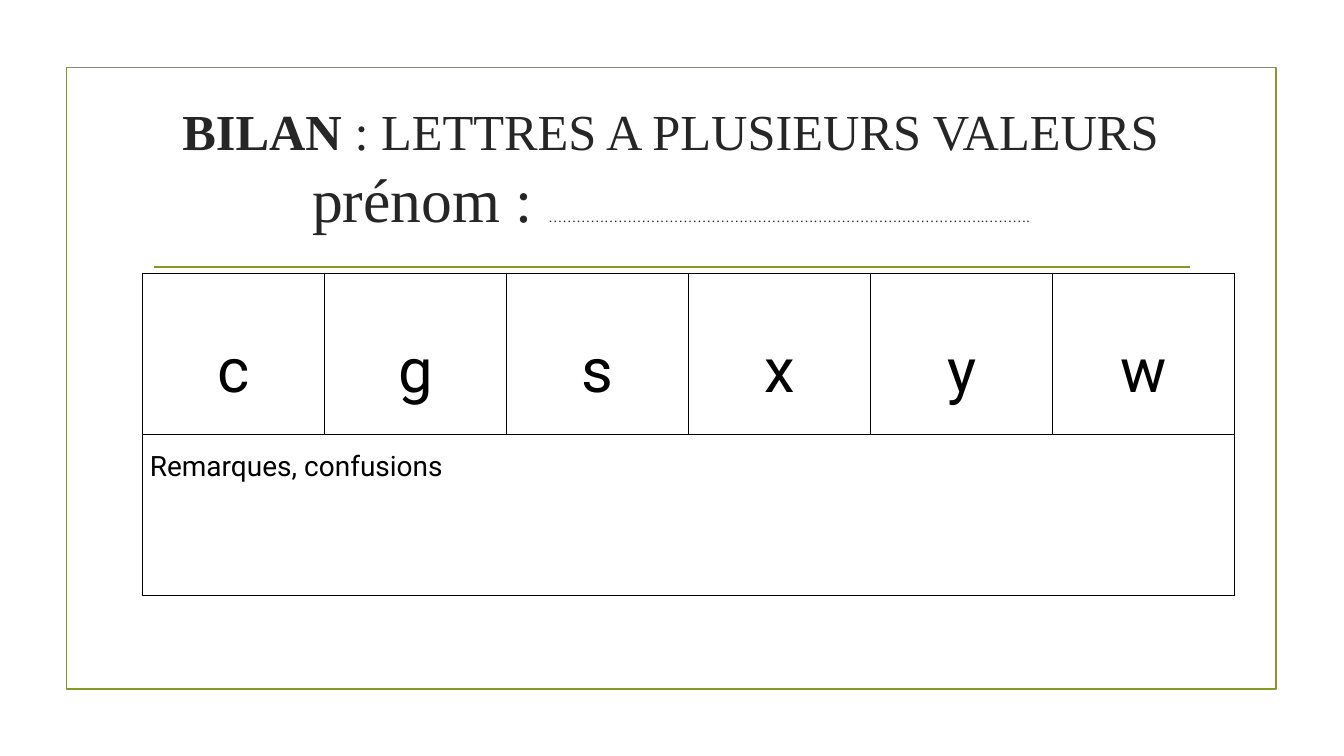
"""Builds the review slide for letters with several sound values."""
from lxml import etree
from pptx import Presentation
from pptx.dml.color import RGBColor
from pptx.enum.shapes import MSO_CONNECTOR, MSO_SHAPE
from pptx.enum.text import MSO_ANCHOR, MSO_AUTO_SIZE, PP_ALIGN
from pptx.oxml.ns import qn
from pptx.util import Pt

STRAIGHT, RECT = MSO_CONNECTOR.STRAIGHT, MSO_SHAPE.RECTANGLE
TOP, MIDDLE = MSO_ANCHOR.TOP, MSO_ANCHOR.MIDDLE
LEFT, CENTER = PP_ALIGN.LEFT, PP_ALIGN.CENTER

GREEN, DARK, BLACK, WHITE = "83992A", "262626", "000000", "FFFFFF"
SERIF, SANS = "Times New Roman", "Roboto"

TITLE_LINES = [
    [("BILAN", 36, True), (" : LETTRES A PLUSIEURS VALEURS", 36, False)],
    [("prénom : ", 44, False), ("…" * 28 + "." + "…" * 3 + ".", 10, False)],
]
DOTS = "………………………………………………………………………………….………."
TITLE_LINES[1][1] = (DOTS, 10, False)
LETTERS = ["c", "g", "s", "x", "y", "w"]
REMARKS = "Remarques, confusions"

FRAME = (47.5, 48.2, 864, 444.2)
TITLE = (46.8, 49, 864.7, 141.1)
RULE = (110.2, 190.8, 850.3, 190.8)
TABLE_LEFT, TABLE_TOP = 102, 195.1
COL_WIDTH, ROW_HEIGHT = 130, 115.2


def rgb(color):
    return RGBColor.from_string(color)


def pts(box):
    return [Pt(v) for v in box]


def add_text(p, text, size=20, font=SANS, color=BLACK, bold=False):
    r = p.add_run()
    r.text = text
    r.font.size, r.font.name, r.font.bold = Pt(size), font, bold
    r.font.color.rgb = rgb(color)


def style_line(line, color=GREEN, width=1.25):
    line.color.rgb = rgb(color)
    line.width = Pt(width)


def style_cell(cell):
    tc_pr = cell._tc.get_or_add_tcPr()
    for side in ("lnL", "lnR", "lnT", "lnB"):
        ln = etree.SubElement(tc_pr, qn(f"a:{side}"), w=str(Pt(1)))
        fill = etree.SubElement(ln, qn("a:solidFill"))
        etree.SubElement(fill, qn("a:srgbClr"), val=BLACK)
    cell.fill.solid()
    cell.fill.fore_color.rgb = rgb(WHITE)
    cell.margin_left = cell.margin_right = Pt(5)
    cell.margin_top = cell.margin_bottom = Pt(0)


def fill_cell(cell, text, size, align, anchor):
    cell.vertical_anchor = anchor
    p = cell.text_frame.paragraphs[0]
    p.alignment, p.line_spacing = align, 1.5
    add_text(p, text, size)


def add_frame(s):
    sp = s.shapes.add_shape(RECT, *pts(FRAME))
    sp.shadow.inherit = False
    sp.fill.background()
    style_line(sp.line)
    rule = s.shapes.add_connector(STRAIGHT, *pts(RULE))
    style_line(rule.line)
    etree.SubElement(rule._element.spPr, qn("a:effectLst"))


def add_title(s):
    sp = s.shapes.title
    sp.left, sp.top, sp.width, sp.height = pts(TITLE)
    tf = sp.text_frame
    tf.word_wrap, tf.auto_size, tf.vertical_anchor = True, MSO_AUTO_SIZE.NONE, MIDDLE
    p = tf.paragraphs[0]
    p.alignment, p.line_spacing = CENTER, 1.0
    for i, line in enumerate(TITLE_LINES):
        if i:
            p.add_line_break()
        for text, size, bold in line:
            add_text(p, text, size, SERIF, DARK, bold)


def add_letter_table(s):
    n = len(LETTERS)
    box = (TABLE_LEFT, TABLE_TOP, n * COL_WIDTH, 2 * ROW_HEIGHT)
    table = s.shapes.add_table(2, n, *pts(box)).table
    table.first_row = table.horz_banding = False
    for cell in table.iter_cells():
        style_cell(cell)
    for col, letter in enumerate(LETTERS):
        fill_cell(table.cell(0, col), letter, 44, CENTER, MIDDLE)
    table.cell(1, 0).merge(table.cell(1, n - 1))
    fill_cell(table.cell(1, 0), REMARKS, 20, LEFT, TOP)


def main():
    prs = Presentation()
    prs.slide_width, prs.slide_height = Pt(960), Pt(540)
    s = prs.slides.add_slide(prs.slide_layouts[5])
    add_frame(s)
    add_title(s)
    add_letter_table(s)
    prs.save("out.pptx")


if __name__ == "__main__":
    main()
